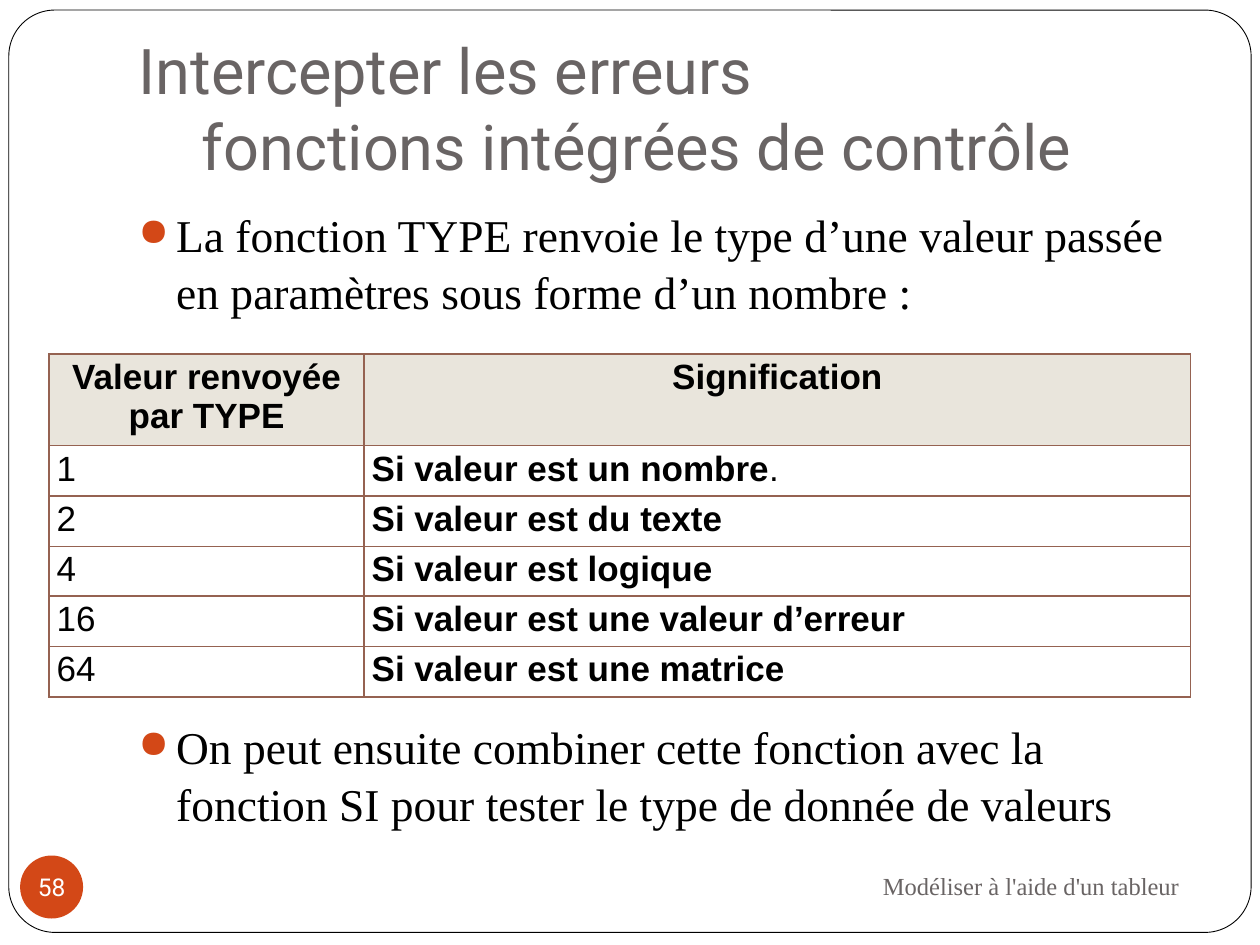
from dataclasses import dataclass

from lxml.etree import SubElement
from pptx import Presentation
from pptx.dml.color import RGBColor
from pptx.enum.shapes import MSO_SHAPE
from pptx.enum.text import MSO_ANCHOR, PP_ALIGN
from pptx.oxml.ns import qn
from pptx.util import Inches, Pt

COLORS = {
    "paper": "FFFFFF",
    "ink": "000000",
    "grey": "696464",
    "accent": "D34817",
    "header": "E9E5DC",
    "border": "956251",
}
SERIF, SANS, HEADING = "Times New Roman", "Arial", "Roboto"
SLIDE_WIDTH, SLIDE_HEIGHT = Inches(10), Inches(7.5)
COLUMN, ROW = SLIDE_WIDTH / 100, SLIDE_HEIGHT / 75


@dataclass(frozen=True)
class Box:
    """A place on the slide, in grid columns and rows."""
    left: float
    top: float
    width: float
    height: float

    def lengths(self) -> tuple:
        return (int(self.left * COLUMN), int(self.top * ROW),
                int(self.width * COLUMN), int(self.height * ROW))


@dataclass(frozen=True)
class TypeRow:
    value: str
    meaning: str
    height: float = 4
    ending: str = ""


@dataclass(frozen=True)
class Bullet:
    text: str
    space_before: float


TYPE_ROWS = [
    TypeRow("1", "Si valeur est un nombre", ending="."),
    TypeRow("2", "Si valeur est du texte"),
    TypeRow("4", "Si valeur est logique", height=3.8),
    TypeRow("16", "Si valeur est une valeur d’erreur"),
    TypeRow("64", "Si valeur est une matrice"),
]
# The second bullet's spacing leaves room for the table.
BULLETS = [
    Bullet("La fonction TYPE renvoie le type d’une valeur passée en paramètres "
           "sous forme d’un nombre :", 3),
    Bullet("On peut ensuite combiner cette fonction avec la fonction SI pour "
           "tester le type de donnée de valeurs", 227.5),
]


def rgb(name: str) -> RGBColor:
    return RGBColor.from_string(COLORS[name])


def write(para, text: str, *, font: str, size: float, color: str = "ink",
          bold: bool = False, align=PP_ALIGN.LEFT) -> None:
    para.alignment = align
    for index, line in enumerate(text.split("\n")):
        if index:
            para.add_line_break()
        span = para.add_run()
        span.text = line
        span.font.name, span.font.size, span.font.bold = font, Pt(size), bold
        span.font.color.rgb = rgb(color)


def set_margins(target, left: float, top: float, right: float, bottom: float) -> None:
    target.margin_left, target.margin_right = Inches(left), Inches(right)
    target.margin_top, target.margin_bottom = Inches(top), Inches(bottom)


def add_filled_shape(page, kind, box: Box, fill: str, line: str | None = None):
    shape = page.shapes.add_shape(kind, *box.lengths())
    shape.shadow.inherit = False
    shape.fill.solid()
    shape.fill.fore_color.rgb = rgb(fill)
    if line:
        shape.line.color.rgb = rgb(line)
        shape.line.width = Pt(0.5)
    else:
        shape.line.fill.background()
    return shape


def add_text_box(page, box: Box):
    frame = page.shapes.add_textbox(*box.lengths()).text_frame
    frame.word_wrap = True
    return frame


def add_frame(page) -> None:
    """Draw the rounded page border behind everything else."""
    border = add_filled_shape(page, MSO_SHAPE.ROUNDED_RECTANGLE,
                              Box(0.7, 0.8, 98.6, 73.2), "paper", "ink")
    border.adjustments[0] = 0.05
    page.shapes._spTree.insert(2, border._element)


def format_title(page, text: str) -> None:
    title = page.shapes.title
    title.left, title.top, title.width, title.height = Box(10, 3, 85, 12.5).lengths()
    frame = title.text_frame
    frame.vertical_anchor = MSO_ANCHOR.BOTTOM
    set_margins(frame, 0.1, 0.05, 0.1, 0.1)
    write(frame.paragraphs[0], text, font=HEADING, size=36, color="grey")


def set_bullet(para) -> None:
    properties = para._p.get_or_add_pPr()
    indent = int(3 * COLUMN)
    properties.set("marL", str(indent))
    properties.set("indent", str(-indent))
    color = SubElement(properties, qn("a:buClr"))
    SubElement(color, qn("a:srgbClr"), val=COLORS["accent"])
    SubElement(properties, qn("a:buSzPct"), val="85000")
    SubElement(properties, qn("a:buChar"), char="●")


def add_bullets(page) -> None:
    frame = add_text_box(page, Box(10, 15.8, 85, 50))
    for index, bullet in enumerate(BULLETS):
        para = frame.add_paragraph() if index else frame.paragraphs[0]
        write(para, bullet.text, font=SERIF, size=26)
        para.line_spacing = 1.04
        para.space_before = Pt(bullet.space_before)
        set_bullet(para)


def style_cell(cell, fill: str) -> None:
    set_margins(cell, 0.06, 0.03, 0.06, 0.03)
    properties = cell._tc.get_or_add_tcPr()
    for side in ("lnL", "lnR", "lnT", "lnB"):
        line = SubElement(properties, qn(f"a:{side}"), w=str(Pt(1)))
        paint = SubElement(line, qn("a:solidFill"))
        SubElement(paint, qn("a:srgbClr"), val=COLORS["border"])
    cell.fill.solid()
    cell.fill.fore_color.rgb = rgb(fill)


def add_type_table(page) -> None:
    widths = [25, 65.6]
    heights = [6.7] + [row.height for row in TYPE_ROWS]
    box = Box(3.9, 28.1, sum(widths), sum(heights))
    table = page.shapes.add_table(len(heights), len(widths), *box.lengths()).table
    for column, width in zip(table.columns, widths):
        column.width = int(width * COLUMN)
    for row, height in zip(table.rows, heights):
        row.height = int(height * ROW)
    for index, row in enumerate(table.rows):
        for cell in row.cells:
            style_cell(cell, "paper" if index else "header")

    def cell_para(row: int, column: int):
        return table.cell(row, column).text_frame.paragraphs[0]

    for column, text in enumerate(["Valeur renvoyée par TYPE", "Signification"]):
        write(cell_para(0, column), text, font=SANS, size=20, bold=True,
              align=PP_ALIGN.CENTER)
    for index, entry in enumerate(TYPE_ROWS, start=1):
        write(cell_para(index, 0), entry.value, font=SANS, size=20)
        write(cell_para(index, 1), entry.meaning, font=SANS, size=20, bold=True)
        if entry.ending:
            write(cell_para(index, 1), entry.ending, font=SANS, size=20)


def add_footer(page, text: str, number: str) -> None:
    footer = add_text_box(page, Box(67.5, 67.7, 27.1, 5.2))
    footer.vertical_anchor = MSO_ANCHOR.MIDDLE
    write(footer.paragraphs[0], text, font=SERIF, size=14, color="grey",
          align=PP_ALIGN.RIGHT)
    badge = add_filled_shape(page, MSO_SHAPE.OVAL, Box(1.6, 67.9, 5, 5), "accent").text_frame
    badge.word_wrap = False
    badge.vertical_anchor = MSO_ANCHOR.MIDDLE
    set_margins(badge, 0, 0, 0, 0)
    write(badge.paragraphs[0], number, font=HEADING, size=14, color="paper",
          align=PP_ALIGN.CENTER)


def main() -> None:
    deck = Presentation()
    deck.slide_width, deck.slide_height = SLIDE_WIDTH, SLIDE_HEIGHT
    page = deck.slides.add_slide(deck.slide_layouts[5])
    add_frame(page)
    format_title(page, "Intercepter les erreurs\n\tfonctions intégrées de contrôle")
    add_bullets(page)
    add_footer(page, "Modéliser à l'aide d'un tableur", "58")
    add_type_table(page)
    deck.save("out.pptx")


if __name__ == "__main__":
    main()
